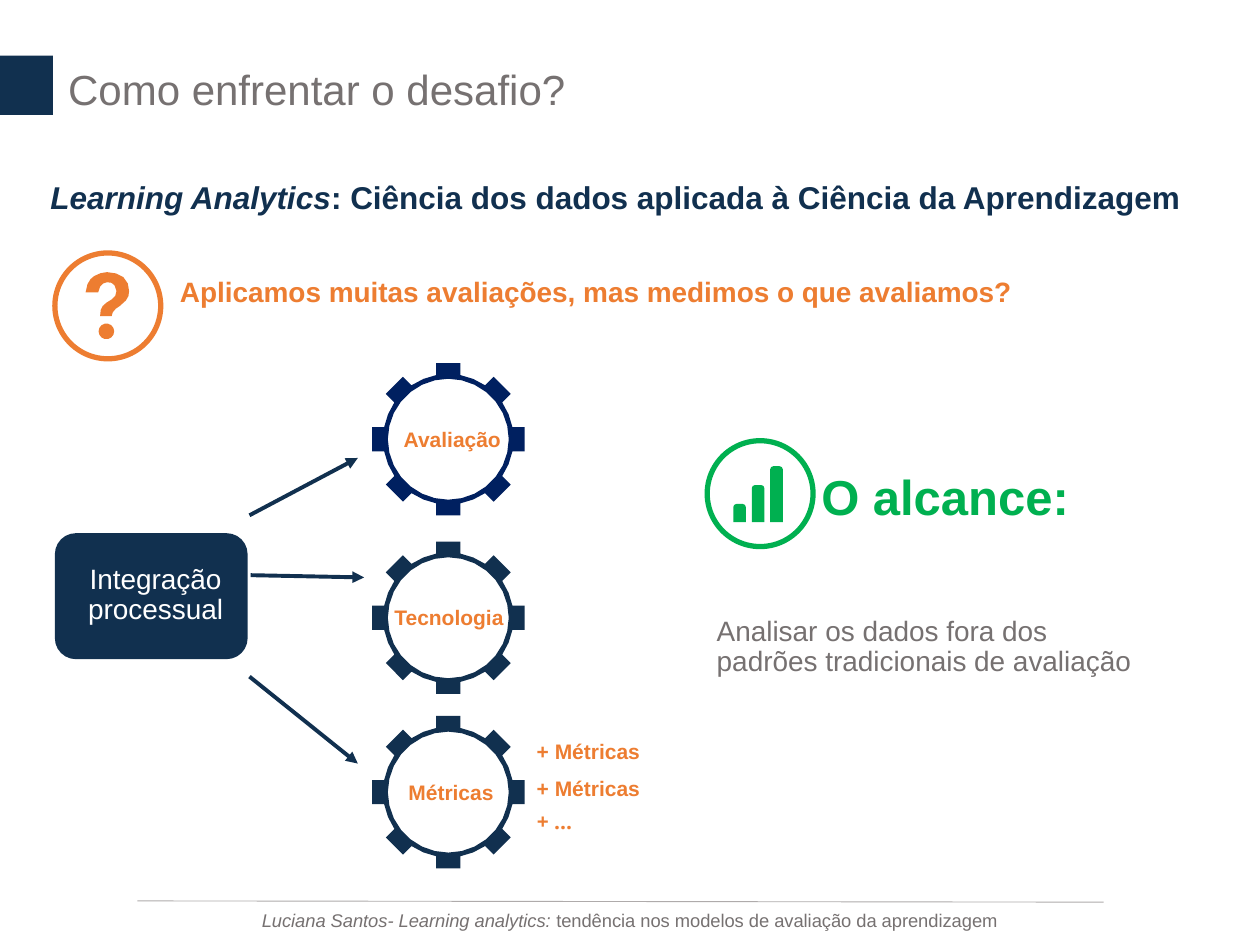
from dataclasses import dataclass
from math import asin, cos, pi, sin
from typing import NamedTuple, Optional

from lxml.etree import SubElement
from pptx import Presentation
from pptx.dml.color import RGBColor
from pptx.enum.shapes import MSO_CONNECTOR, MSO_SHAPE
from pptx.enum.text import MSO_ANCHOR, MSO_AUTO_SIZE, PP_ALIGN
from pptx.oxml.ns import qn
from pptx.util import Inches, Pt

# Grid of 100 columns by 75 rows: one unit is the same length both ways
UNIT = Inches(10) // 100
NAVY, BLUE, ORANGE, GREEN = "11304F", "002060", "ED7D31", "00B050"
GREY, RULE, WHITE = "767171", "AFABAB", "FFFFFF"


class Span(NamedTuple):
    text: str
    italic: bool = False


class Area(NamedTuple):
    left: float
    top: float
    width: float
    height: float


@dataclass
class Label:
    area: Area
    spans: list[Span]
    size: float
    color: str
    bold: bool = False
    align: PP_ALIGN = PP_ALIGN.LEFT
    anchor: MSO_ANCHOR = MSO_ANCHOR.BOTTOM
    font: str = "Arial"
    wrap: bool = True
    spacing: float = 0.9


@dataclass
class Gear:
    middle: float
    color: str
    text: str
    label_left: float
    align: PP_ALIGN = PP_ALIGN.CENTER


@dataclass
class Line:
    start: tuple[float, float]
    end: tuple[float, float]
    color: str = NAVY
    weight: float = 2.25
    arrow: bool = True


def grid(*values: float) -> list[int]:
    return [round(value * UNIT) for value in values]


def rgb(color: str) -> RGBColor:
    return RGBColor.from_string(color)


def write_label(box, label: Label) -> None:
    frame = box.text_frame
    frame.word_wrap = label.wrap
    frame.auto_size = MSO_AUTO_SIZE.NONE
    frame.vertical_anchor = label.anchor
    para = frame.paragraphs[0]
    para.alignment, para.line_spacing = label.align, label.spacing
    for span in label.spans:
        run = para.add_run()
        run.text = span.text
        font = run.font
        font.name, font.size = label.font, Pt(label.size)
        font.bold, font.italic = label.bold, span.italic
        font.color.rgb = rgb(label.color)


def add_label(parent, label: Label) -> None:
    write_label(parent.shapes.add_textbox(*grid(*label.area)), label)


def paint(shape, fill: Optional[str] = None, line: Optional[str] = None) -> None:
    shape.shadow.inherit = False
    if fill:
        shape.fill.solid()
        shape.fill.fore_color.rgb = rgb(fill)
    else:
        shape.fill.background()
    if line:
        shape.line.color.rgb = rgb(line)
        shape.line.width = Pt(3)
    else:
        shape.line.fill.background()


def add_preset(slide, kind: MSO_SHAPE, area: Area, fill=None, line=None) -> None:
    paint(slide.shapes.add_shape(kind, *grid(*area)), fill, line)


def add_outline(parent, contours: list[list[tuple]], color: str) -> None:
    builder = None
    for contour in contours:
        first, *rest = [grid(*point) for point in contour]
        if builder is None:
            builder = parent.shapes.build_freeform(*first, scale=1.0)
        else:
            builder.move_to(*first)
        builder.add_line_segments(rest, close=True)
    paint(builder.convert_to_shape(), color)


def arc(x: float, y: float, radius: float, start: float, end: float, steps: int) -> list[tuple]:
    angles = [start + (end - start) * step / steps for step in range(steps + 1)]
    return [(x + radius * cos(angle), y + radius * sin(angle)) for angle in angles]


def add_gear(parent, gear: Gear, x: float = 35.58) -> None:
    tip, rim, hole, half_tooth, teeth = 6.05, 5.18, 4.8, 0.96, 8
    pitch, half_angle = 2 * pi / teeth, asin(half_tooth / rim)
    edge = []
    for tooth in range(teeth):
        angle = tooth * pitch
        for side in (-half_tooth, half_tooth):
            edge.append((x + tip * cos(angle) - side * sin(angle),
                         gear.middle + tip * sin(angle) + side * cos(angle)))
        edge += arc(x, gear.middle, rim, angle + half_angle, angle + pitch - half_angle, 2)
    add_outline(parent, [edge, arc(x, gear.middle, hole, 2 * pi, 0, 28)[:-1]], gear.color)
    add_label(parent, Label(Area(gear.label_left, gear.middle - 1.53, 12, 3), [Span(gear.text)],
                            12, ORANGE, True, gear.align, MSO_ANCHOR.TOP, spacing=1.0))


def add_question_mark(slide) -> None:
    hook = [(6.8, 23.2), (6.95, 22.55), (7.2, 22.15), (7.5, 21.9), (8, 21.68), (8.5, 21.6),
            (9.2, 21.7), (9.8, 22), (10.15, 22.5), (10.25, 23.1), (10.2, 23.5), (10, 23.85),
            (9.5, 24.3), (9.2, 24.5), (8.95, 24.8), (8.87, 25.1), (7.95, 25.1), (8, 24.6),
            (8.15, 24.3), (8.45, 24.03), (8.9, 23.75), (9.15, 23.5), (9.25, 23.1),
            (9.1, 22.65), (8.85, 22.45), (8.5, 22.4), (8.2, 22.5), (7.95, 22.75), (7.8, 23.2)]
    add_outline(slide, [hook, arc(8.45, 26.3, 0.62, 0, 2 * pi, 14)[:-1]], ORANGE)


def add_bars(slide) -> None:
    bottom, width, corner = 41.43, 1, 0.25
    bars = []
    for left, top in ((61.13, 37), (59.67, 38.5), (58.2, 40)):
        right = left + width
        bars.append([(left, bottom)]
                    + arc(left + corner, top + corner, corner, pi, 1.5 * pi, 2)
                    + arc(right - corner, top + corner, corner, 1.5 * pi, 2 * pi, 2)
                    + [(right, bottom)])
    add_outline(slide, bars, GREEN)


def add_line(slide, line: Line) -> None:
    connector = slide.shapes.add_connector(
        MSO_CONNECTOR.STRAIGHT, *grid(*line.start, *line.end))
    connector.line.color.rgb = rgb(line.color)
    connector.line.width = Pt(line.weight)
    if line.arrow:
        SubElement(connector.line._get_or_add_ln(), qn("a:tailEnd"), type="triangle")
    SubElement(connector._element.spPr, qn("a:effectLst"))


TITLE = Label(Area(4.4, 4.9, 100, 4.7), [Span("Como enfrentar o desafio?")], 24, GREY)
SUBTITLE = Label(Area(3.02, 13, 100, 4.7),
                 [Span("Learning Analytics", True),
                  Span(": Ciência dos dados aplicada à Ciência da Aprendizagem")], 18, NAVY, True)
QUESTION = Label(Area(13.3, 19.3, 81.9, 5.7),
                 [Span("Aplicamos muitas avaliações, mas medimos o que avaliamos?")],
                 16, ORANGE, True)
PROCESS = Label(Area(4.8, 41.15, 15.1, 9), [Span("Integração processual")], 16, WHITE,
                align=PP_ALIGN.CENTER)
REACH = Label(Area(64.2, 38.25, 38.1, 4), [Span("O alcance:")], 28, GREEN, True)
GOAL = Label(Area(55.9, 48.55, 36.6, 5.7),
             [Span("Analisar os dados fora dos padrões tradicionais de avaliação")], 16, GREY)
FOOTER = Label(Area(0, 70.7, 100, 3.7),
               [Span("Luciana Santos- Learning analytics: ", True),
                Span("tendência nos modelos de avaliação da aprendizagem")], 10.5, GREY,
               align=PP_ALIGN.CENTER)
METRICS = [Label(Area(41.62, top, width, height), [Span(text)], 12, ORANGE, True,
                 anchor=MSO_ANCHOR.TOP, font=font, wrap=False, spacing=1.0)
           for top, width, height, text, font in ((58.1, 10.3, 3, "+ Métricas", "Arial"),
                                                  (61.1, 10.3, 5, "+ Métricas", "Arial"),
                                                  (63.7, 4.8, 5, "+ ...", "Open Sans"))]
GEARS = [Gear(34.86, BLUE, "Avaliação", 29.9),
         Gear(49.03, NAVY, "Tecnologia", 30.32, PP_ALIGN.LEFT),
         Gear(62.87, NAVY, "Métricas", 29.8)]
ARROWS = [Line((19.8, 40.9), (28.4, 36.35)), Line((19.9, 45.65), (28.9, 45.83)),
          Line((19.8, 53.7), (28.4, 60.6))]
FOOTER_RULE = Line((10.9, 71.5), (87.6, 71.6), RULE, 0.5, False)


def main() -> None:
    deck = Presentation()
    deck.slide_width, deck.slide_height = 100 * UNIT, 75 * UNIT
    slide = deck.slides.add_slide(deck.slide_layouts[5])
    # Title, marker and subtitle
    title = slide.shapes.title
    title.left, title.top, title.width, title.height = grid(*TITLE.area)
    write_label(title, TITLE)
    add_preset(slide, MSO_SHAPE.RECTANGLE, Area(0, 4.42, 4.2, 4.7), NAVY)
    add_label(slide, SUBTITLE)
    # Question and its icon
    add_label(slide, QUESTION)
    add_preset(slide, MSO_SHAPE.OVAL, Area(4.36, 20.08, 8.4, 8.4), line=ORANGE)
    add_question_mark(slide)
    # One group per gear, the last one with its list of metrics
    for gear in GEARS:
        group = slide.shapes.add_group_shape()
        add_gear(group, gear)
    for metric in METRICS:
        add_label(group, metric)
    # Process box and arrows to the gears
    add_preset(slide, MSO_SHAPE.ROUNDED_RECTANGLE, Area(4.36, 42.32, 15.3, 10), NAVY)
    add_label(slide, PROCESS)
    for arrow in ARROWS:
        add_line(slide, arrow)
    # Reach: heading, chart icon and goal
    add_label(slide, REACH)
    add_preset(slide, MSO_SHAPE.OVAL, Area(56.13, 34.98, 8.4, 8.4), line=GREEN)
    add_bars(slide)
    add_label(slide, GOAL)
    # Footer
    add_line(slide, FOOTER_RULE)
    add_label(slide, FOOTER)
    deck.save("out.pptx")


if __name__ == "__main__":
    main()
